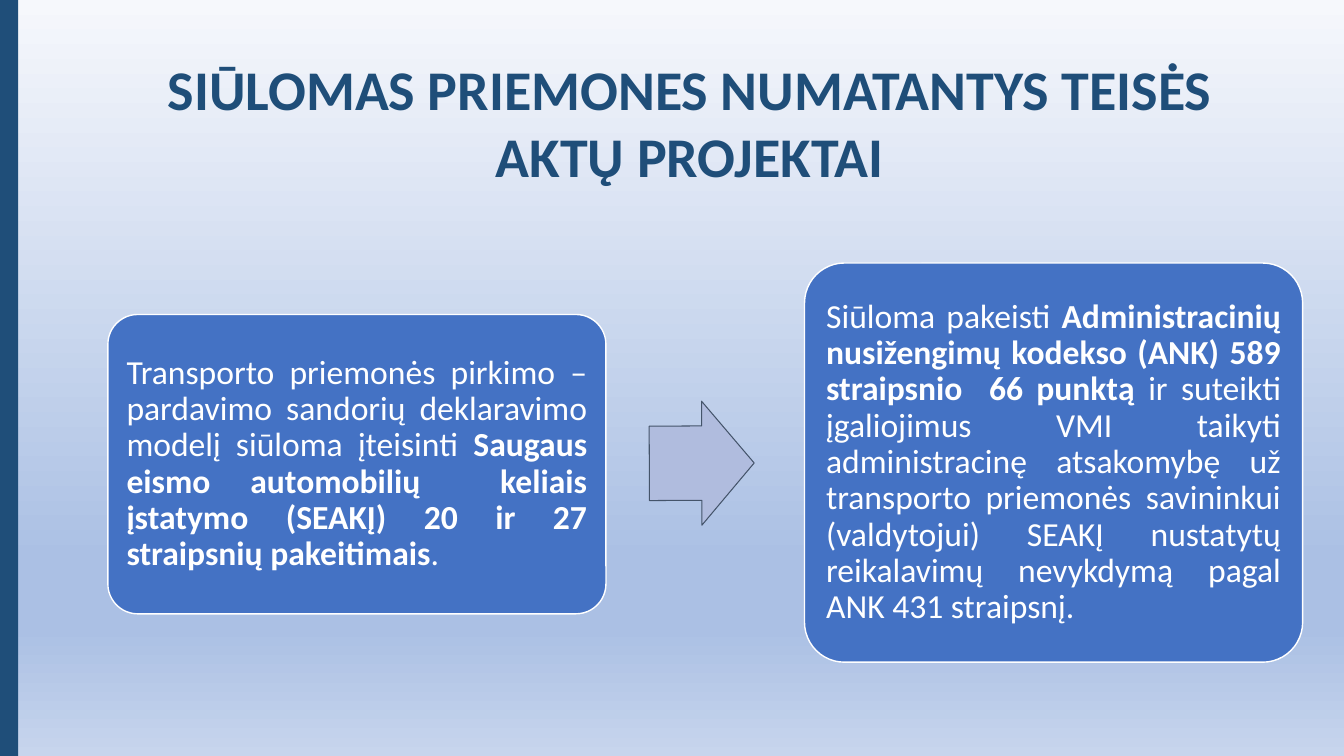
from lxml.etree import SubElement
from pptx import Presentation
from pptx.dml.color import RGBColor
from pptx.enum.shapes import MSO_SHAPE as Preset
from pptx.enum.text import MSO_ANCHOR as Anchor, MSO_AUTO_SIZE as AutoSize, PP_ALIGN as Align
from pptx.oxml.ns import qn
from pptx.util import Inches, Pt

NAVY = RGBColor(0x1F, 0x4E, 0x79)
BLUE = RGBColor(0x44, 0x72, 0xC4)
LAVENDER = RGBColor(0xB0, 0xBC, 0xDE)
SLATE = RGBColor(0x44, 0x54, 0x6A)
WHITE = RGBColor(0xFF, 0xFF, 0xFF)
SKY_PALE = RGBColor(0xF6, 0xF8, 0xFC)
SKY_DEEP = RGBColor(0xAB, 0xC0, 0xE4)
SKY_LIGHT = RGBColor(0xC7, 0xD5, 0xED)
SKY_STOPS = [(0, SKY_PALE), (74, SKY_DEEP), (83, SKY_DEEP), (100, SKY_LIGHT)]

FONT = "Calibri"
TITLE = "SIŪLOMAS PRIEMONES NUMATANTYS TEISĖS AKTŲ PROJEKTAI"
# Runs of each box: (text, bold)
TRAFFIC_LAW = [
    ("Transporto priemonės pirkimo – pardavimo sandorių deklaravimo modelį siūloma įteisinti ", False),
    ("Saugaus eismo automobilių  keliais įstatymo (SEAKĮ) 20 ir 27 straipsnių pakeitimais", True),
    (".", False),
]
OFFENCE_CODE = [
    ("Siūloma pakeisti ", False),
    ("Administracinių nusižengimų kodekso (ANK) 589 straipsnio  66 punktą", True),
    (" ir suteikti įgaliojimus VMI taikyti administracinę atsakomybę už transporto priemonės "
     "savininkui (valdytojui) SEAKĮ nustatytų reikalavimų nevykdymą pagal ANK 431 straipsnį.", False),
]


def set_background(slide):
    fill = slide.background.fill
    fill.gradient()
    fill.gradient_angle = 270
    stops = slide.element.find(".//" + qn("a:gsLst"))
    stops.clear()
    for percent, color in SKY_STOPS:
        stop = SubElement(stops, qn("a:gs"), pos=str(percent * 1000))
        SubElement(stop, qn("a:srgbClr"), val=str(color))


def set_title(slide, text):
    title = slide.shapes.title
    title.left, title.top = Inches(0.95), Inches(0.49)
    title.width, title.height = Inches(11.78), Inches(2.12)
    frame = title.text_frame
    frame.text = text
    frame.word_wrap = True
    frame.auto_size = AutoSize.NONE
    frame.vertical_anchor = Anchor.TOP
    heading = frame.paragraphs[0]
    heading.alignment = Align.CENTER
    heading.font.name, heading.font.size = FONT, Pt(40)
    heading.font.bold = True
    heading.font.color.rgb = NAVY


def add_block(slide, preset, box, fill, line=None, line_width=1):
    block = slide.shapes.add_shape(preset, *map(Inches, box))
    block.shadow.inherit = False
    block.fill.solid()
    block.fill.fore_color.rgb = fill
    if line is None:
        block.line.fill.background()
    else:
        block.line.color.rgb = line
        block.line.width = Pt(line_width)
    return block


def add_proposal(slide, box, runs):
    proposal = add_block(slide, Preset.ROUNDED_RECTANGLE, box, BLUE, WHITE)
    proposal.adjustments[0] = 0.1
    frame = proposal.text_frame
    frame.word_wrap = True
    frame.vertical_anchor = Anchor.MIDDLE
    frame.margin_left = frame.margin_right = Inches(0.1)
    frame.margin_top = frame.margin_bottom = Inches(0.1)
    paragraph = frame.paragraphs[0]
    paragraph.alignment = Align.JUSTIFY
    paragraph.line_spacing = 0.9
    paragraph.font.name, paragraph.font.size = FONT, Pt(24)
    paragraph.font.color.rgb = WHITE
    for text, bold in runs:
        run = paragraph.add_run()
        run.text = text
        run.font.bold = bold


def main():
    prs = Presentation()
    prs.slide_width, prs.slide_height = Inches(13.33), Inches(7.5)
    slide = prs.slides.add_slide(prs.slide_layouts[5])

    # Backdrop, side band and title
    set_background(slide)
    add_block(slide, Preset.RECTANGLE, (0, 0, 0.18, 7.5), NAVY)
    set_title(slide, TITLE)

    # Two proposals joined by an arrow
    add_proposal(slide, (1.07, 3.12, 4.94, 2.97), TRAFFIC_LAW)
    arrow = add_block(slide, Preset.RIGHT_ARROW, (6.44, 3.98, 1.04, 1.23), LAVENDER, SLATE, 0.75)
    arrow.adjustments[0] = 0.6
    arrow.rotation = 359.8
    add_proposal(slide, (7.98, 2.61, 4.94, 3.96), OFFENCE_CODE)

    prs.save("out.pptx")


if __name__ == "__main__":
    main()
